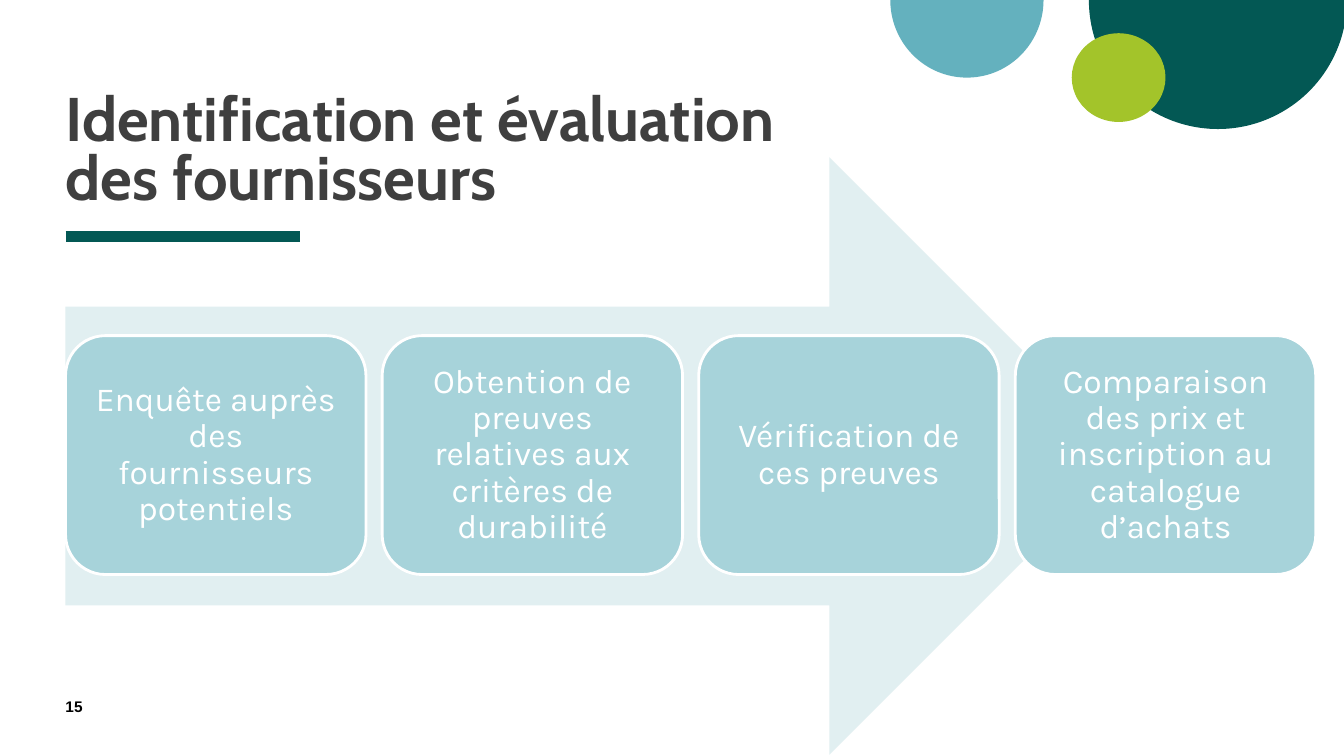
from enum import Enum

from lxml.etree import SubElement
from pptx import Presentation
from pptx.dml.color import RGBColor
from pptx.enum.shapes import MSO_CONNECTOR, MSO_SHAPE
from pptx.enum.text import MSO_ANCHOR, MSO_AUTO_SIZE, PP_ALIGN
from pptx.oxml.ns import qn
from pptx.util import Inches, Pt


class Theme(Enum):
    DARK_GREEN = RGBColor.from_string("035854")
    BLUE = RGBColor.from_string("64B1BE")
    LIME = RGBColor.from_string("A3C42A")
    ARROW = RGBColor.from_string("E1EFF1")
    STEP = RGBColor.from_string("A7D3DA")
    WHITE = RGBColor.from_string("FFFFFF")
    TITLE = RGBColor.from_string("3F3F3F")
    BLACK = RGBColor.from_string("000000")
    TITLE_SIZE = Pt(44)
    STEP_SIZE = Pt(24)
    NUMBER_SIZE = Pt(11)


def add_filled_shape(kind, left, top, width, height, color):
    shape = slide.shapes.add_shape(
        kind, Inches(left), Inches(top), Inches(width), Inches(height))
    shape.shadow.inherit = False
    shape.fill.solid()
    shape.fill.fore_color.rgb = color.value
    shape.line.fill.background()
    return shape


def write_text(shape, text, font_name, size, color, bold, inset=0):
    """Set the text of a shape with equal insets and return its paragraph."""
    frame = shape.text_frame
    frame.word_wrap = True
    frame.auto_size = MSO_AUTO_SIZE.NONE
    frame.margin_left = frame.margin_right = Inches(inset)
    frame.margin_top = frame.margin_bottom = Inches(inset)
    frame.text = text
    paragraph = frame.paragraphs[0]
    font = paragraph.runs[0].font
    font.name = font_name
    font.size = size.value
    font.bold = bold
    font.color.rgb = color.value
    return paragraph


presentation = Presentation()
presentation.slide_width = Inches(13.33)
presentation.slide_height = Inches(7.5)
slide = presentation.slides.add_slide(presentation.slide_layouts[5])

# Corner decoration
for left, top, width, height, color in [
    (10.8, -1.28, 2.56, 2.56, Theme.DARK_GREEN),
    (8.83, -0.77, 1.52, 1.54, Theme.BLUE),
]:
    half_disc = add_filled_shape(MSO_SHAPE.PIE, left, top, width, height, color)
    half_disc.adjustments[0] = 0
    half_disc.adjustments[1] = 108
add_filled_shape(MSO_SHAPE.OVAL, 10.63, 0.33, 0.93, 0.88, Theme.LIME)

# Title and its underline
title = slide.shapes.title
title.left, title.top = Inches(0.65), Inches(0.37)
title.width, title.height = Inches(7.93), Inches(1.74)
title_paragraph = write_text(
    title, "Identification et évaluation des fournisseurs",
    "Cabin", Theme.TITLE_SIZE, Theme.TITLE, True)
title_paragraph.alignment = PP_ALIGN.LEFT
title_paragraph.line_spacing = 0.8
title.text_frame.vertical_anchor = MSO_ANCHOR.BOTTOM

underline = slide.shapes.add_connector(
    MSO_CONNECTOR.STRAIGHT, Inches(0.65), Inches(2.35), Inches(2.98), Inches(2.35))
underline.line.color.rgb = Theme.DARK_GREEN.value
underline.line.width = Pt(8)
SubElement(underline._element.spPr, qn("a:effectLst"))

# Slide number
number_box = slide.shapes.add_textbox(
    Inches(0.65), Inches(6.92), Inches(0.57), Inches(0.27))
write_text(number_box, "15", "Arial", Theme.NUMBER_SIZE, Theme.BLACK, True)

# Process arrow with its steps
add_filled_shape(MSO_SHAPE.RIGHT_ARROW, 0.65, 1.56, 10.54, 5.93, Theme.ARROW)

steps = [
    "Enquête auprès des fournisseurs potentiels",
    "Obtention de preuves relatives aux critères de durabilité",
    "Vérification de ces preuves",
    "Comparaison des prix et inscription au catalogue d’achats",
]
for index, step in enumerate(steps):
    box = add_filled_shape(
        MSO_SHAPE.ROUNDED_RECTANGLE, 0.65 + 3.14 * index, 3.33, 2.98, 2.37, Theme.STEP)
    box.adjustments[0] = 0.167
    box.line.color.rgb = Theme.WHITE.value
    box.line.width = Pt(2)
    step_paragraph = write_text(
        box, step, "Karla", Theme.STEP_SIZE, Theme.WHITE, False, inset=0.11)
    step_paragraph.alignment = PP_ALIGN.CENTER
    step_paragraph.line_spacing = 0.9
    box.text_frame.vertical_anchor = MSO_ANCHOR.MIDDLE

presentation.save("out.pptx")
